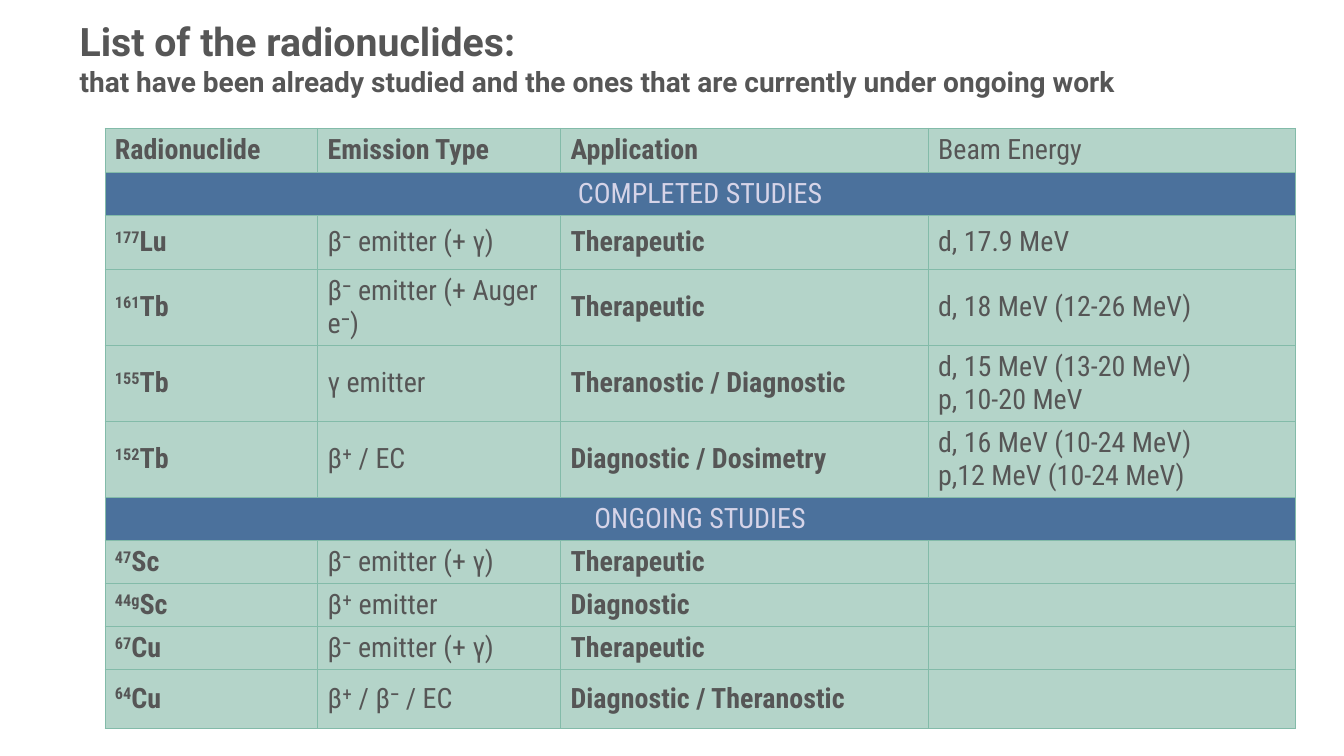
from dataclasses import dataclass

from lxml import etree
from pptx import Presentation
from pptx.dml import color
from pptx.enum import text as t
from pptx.oxml import ns
from pptx.util import Pt

COLORS = {
    "ink": "565656",
    "cell": "B4D4C9",
    "band": "4B719C",
    "band_text": "D6D4E8",
    "grid": "83BBA9",
}
TITLE_FONT, TABLE_FONT = "Roboto", "Roboto Condensed"
HEADINGS = ("Radionuclide", "Emission Type", "Application", "Beam Energy")
COLUMN_WIDTHS = (152, 173.5, 262.5, 262.5)
HEADING_HEIGHT, LINE_HEIGHT, DOUBLE_HEIGHT = 31.7, 30.6, 54.2


@dataclass(frozen=True)
class Nuclide:
    mass: str
    element: str
    emission: str
    application: str
    energy: str = ""
    height: float = LINE_HEIGHT


@dataclass(frozen=True)
class Study:
    heading: str
    nuclides: tuple[Nuclide, ...]


STUDIES = (
    Study("COMPLETED STUDIES", (
        Nuclide("177", "Lu", "β⁻ emitter (+ γ)", "Therapeutic",
                "d, 17.9 MeV", 38.4),
        Nuclide("161", "Tb", "β⁻ emitter (+ Auger e⁻)", "Therapeutic",
                "d, 18 MeV (12-26 MeV)", DOUBLE_HEIGHT),
        Nuclide("155", "Tb", "γ emitter", "Theranostic / Diagnostic",
                "d, 15 MeV (13-20 MeV)\np, 10-20 MeV", DOUBLE_HEIGHT),
        Nuclide("152", "Tb", "β⁺ / EC", "Diagnostic / Dosimetry",
                "d, 16 MeV (10-24 MeV)\np,12 MeV (10-24 MeV)", DOUBLE_HEIGHT),
    )),
    Study("ONGOING STUDIES", (
        Nuclide("47", "Sc", "β⁻ emitter (+ γ)", "Therapeutic"),
        Nuclide("44g", "Sc", "β⁺ emitter", "Diagnostic"),
        Nuclide("67", "Cu", "β⁻ emitter (+ γ)", "Therapeutic"),
        Nuclide("64", "Cu", "β⁺ / β⁻ / EC", "Diagnostic / Theranostic",
                height=41.8),
    )),
)


def rgb(name: str) -> color.RGBColor:
    return color.RGBColor.from_string(COLORS[name])


def style_run(run, size: float, face: str, bold: bool, ink: str = "ink") -> None:
    run.font.size, run.font.name, run.font.bold = Pt(size), face, bold
    run.font.color.rgb = rgb(ink)


def style_cell(cell, fill: str = "cell") -> None:
    """Fill the cell and draw its four thin borders."""
    cell.vertical_anchor = t.MSO_ANCHOR.MIDDLE
    cell.fill.solid()
    cell.fill.fore_color.rgb = rgb(fill)
    properties = cell._tc.get_or_add_tcPr()
    for position, side in enumerate(("lnL", "lnR", "lnT", "lnB")):
        border = etree.Element(ns.qn(f"a:{side}"), w=str(Pt(0.5)))
        solid = etree.SubElement(border, ns.qn("a:solidFill"))
        etree.SubElement(solid, ns.qn("a:srgbClr"), val=COLORS["grid"])
        properties.insert(position, border)


def write_cell(cell, wording: str, bold: bool, ink: str = "ink") -> None:
    cell.text_frame.text = wording
    for paragraph in cell.text_frame.paragraphs:
        for run in paragraph.runs:
            style_run(run, 20, TABLE_FONT, bold, ink)


def write_isotope(cell, nuclide: Nuclide) -> None:
    """Write the element symbol after its raised mass number."""
    write_cell(cell, nuclide.mass, True)
    paragraph = cell.text_frame.paragraphs[0]
    paragraph.runs[0]._r.get_or_add_rPr().set("baseline", "30000")
    element = paragraph.add_run()
    element.text = nuclide.element
    style_run(element, 20, TABLE_FONT, True)


def add_title(slide) -> None:
    title = slide.shapes.title
    title.left, title.top, title.width, title.height = (
        Pt(49.7), Pt(15.1), Pt(782), Pt(52.6))
    frame = title.text_frame
    frame.auto_size = t.MSO_AUTO_SIZE.NONE
    frame.vertical_anchor = t.MSO_ANCHOR.MIDDLE
    heading = frame.paragraphs[0]
    heading.text = ("List of the radionuclides:\vthat have been already studied "
                    "and the ones that are currently under ongoing work")
    heading.alignment = t.PP_ALIGN.LEFT
    for run, size in zip(heading.runs, (28, 20)):
        style_run(run, size, TITLE_FONT, True)
    # Keep the line break as tall as the first line
    line_break = heading._p.find(ns.qn("a:br"))
    etree.SubElement(line_break, ns.qn("a:rPr"), sz="2800")


def add_radionuclides(slide) -> None:
    heights = [HEADING_HEIGHT]
    for study in STUDIES:
        heights += [LINE_HEIGHT, *(n.height for n in study.nuclides)]
    table = slide.shapes.add_table(
        len(heights), len(COLUMN_WIDTHS), Pt(74.9), Pt(91.5),
        Pt(sum(COLUMN_WIDTHS)), Pt(sum(heights))).table
    for column, width in zip(table.columns, COLUMN_WIDTHS):
        column.width = Pt(width)
    for row, height in zip(table.rows, heights):
        row.height = Pt(height)
    for cell in table.iter_cells():
        style_cell(cell)

    # Column headings
    for index, heading in enumerate(HEADINGS):
        write_cell(table.cell(0, index), heading, heading != "Beam Energy")

    # Each study: a merged band, then its nuclides
    line = 1
    for study in STUDIES:
        band = table.cell(line, 0)
        band.merge(table.cell(line, len(HEADINGS) - 1))
        band.fill.fore_color.rgb = rgb("band")
        write_cell(band, study.heading, False, "band_text")
        band.text_frame.paragraphs[0].alignment = t.PP_ALIGN.CENTER
        for line, nuclide in enumerate(study.nuclides, line + 1):
            write_isotope(table.cell(line, 0), nuclide)
            write_cell(table.cell(line, 1), nuclide.emission, False)
            write_cell(table.cell(line, 2), nuclide.application, True)
            write_cell(table.cell(line, 3), nuclide.energy, False)
        line += 1


def main() -> None:
    deck = Presentation()
    deck.slide_width, deck.slide_height = Pt(960), Pt(540)
    slide = deck.slides.add_slide(deck.slide_layouts[5])
    add_title(slide)
    add_radionuclides(slide)
    deck.save("out.pptx")


if __name__ == "__main__":
    main()
